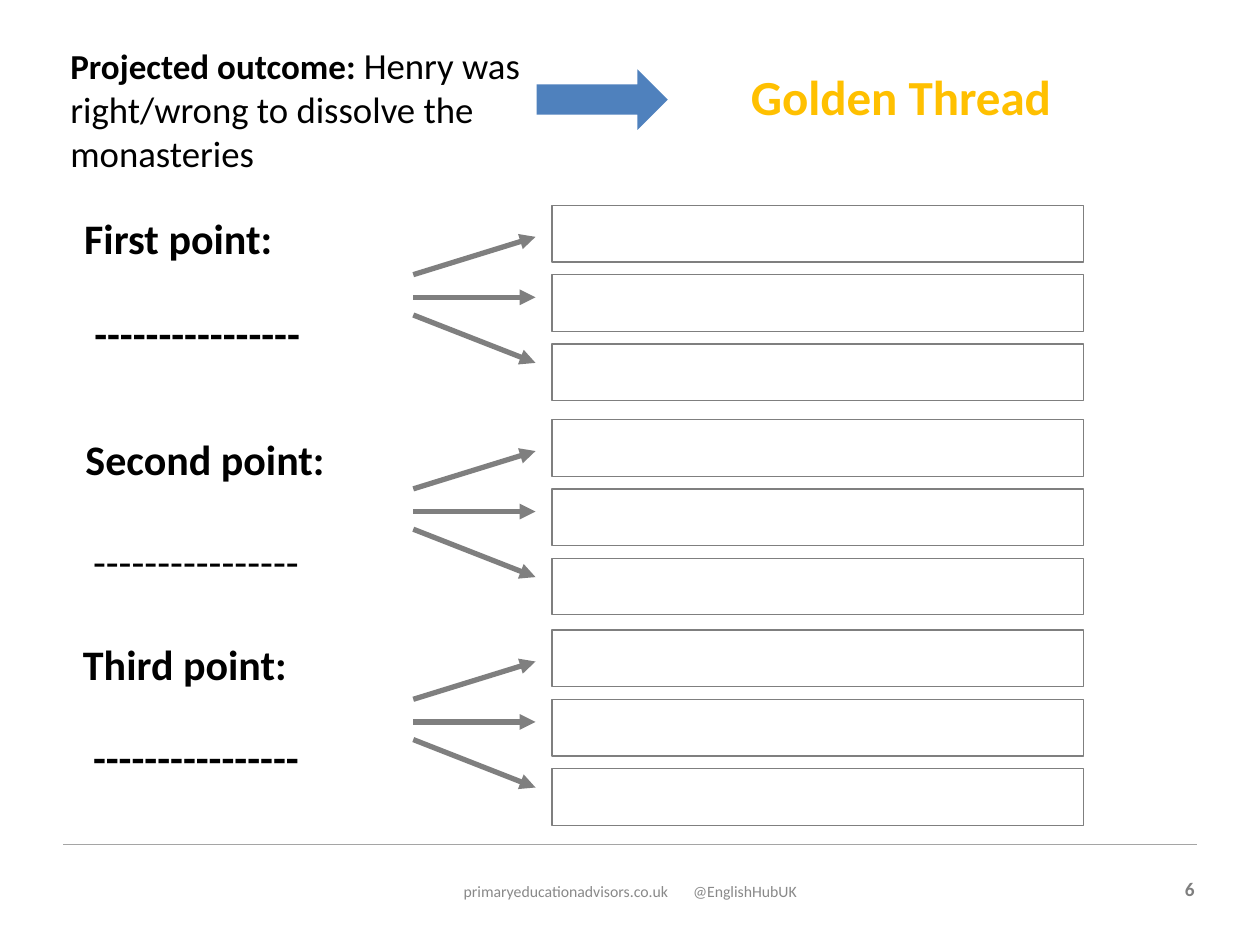
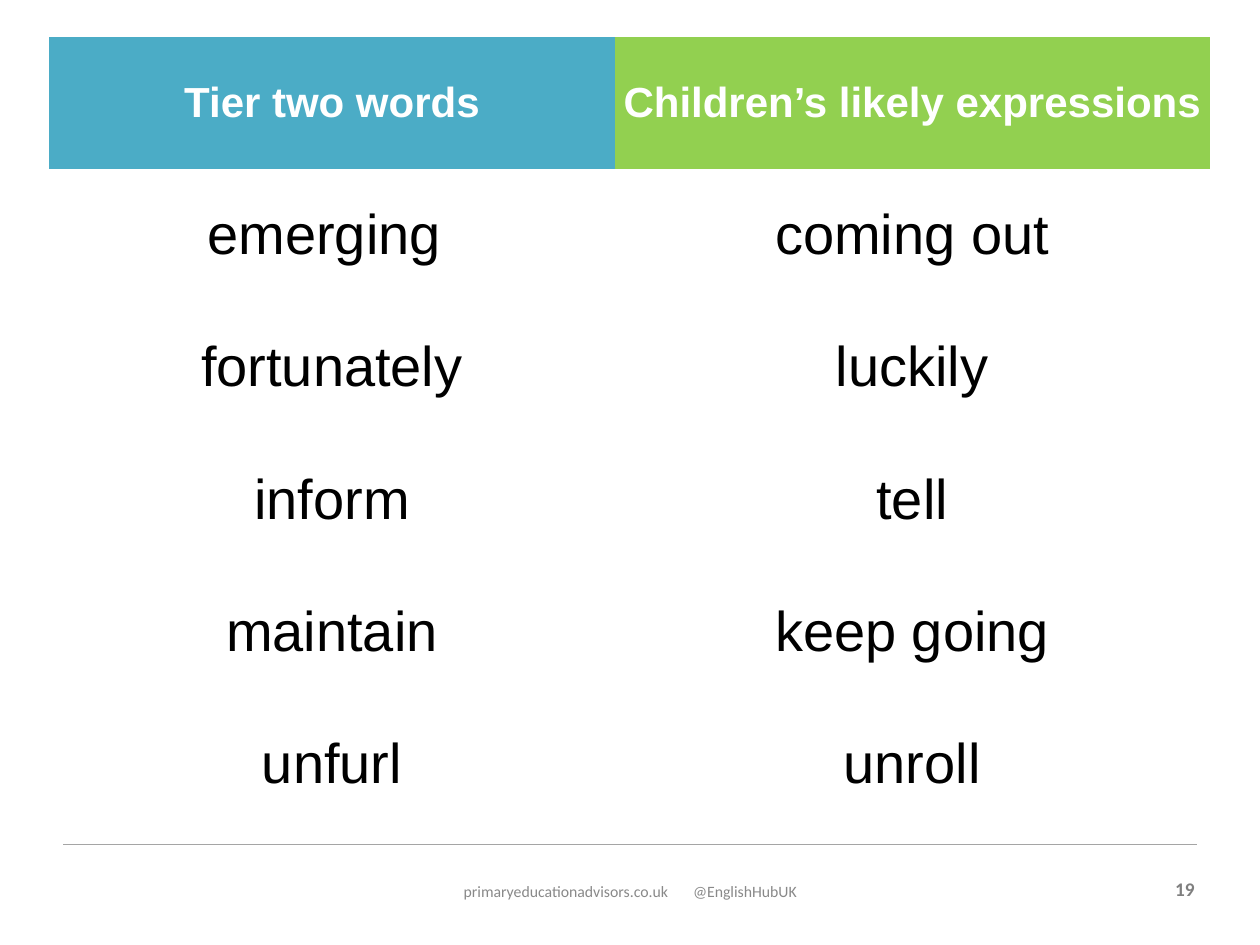
from lxml import etree
from pptx import Presentation
from pptx.dml.color import RGBColor
from pptx.enum import shapes, text
from pptx.oxml.ns import qn
from pptx.util import Inches, Pt

# Content
OUTCOME = [("Projected outcome: ", 20, True),
           ("Henry was right/wrong to dissolve the monasteries", 21, False)]
BLANK_LINE = "-" * 16
# label, label (left, top), blank line (left, top), blank line bold, boxes' top
POINTS = [
    ("First point:", (0.57, 1.64), (0.65, 2.39), True, 1.63),
    ("Second point:", (0.58, 3.39), (0.64, 4.20), False, 3.33),
    ("Third point:", (0.56, 5.02), (0.64, 5.76), True, 5.00),
]
WORDS = [
    ("Tier two words", "Children’s likely expressions"),
    ("emerging ", "coming out"),
    ("fortunately", "luckily"),
    ("inform", "tell"),
    ("maintain", "keep going"),
    ("unfurl", "unroll"),
]
FOOTER = "primaryeducationadvisors.co.uk\t@EnglishHubUK"

# Shared look
COLORS = {"ink": "000000", "white": "FFFFFF", "gold": "FFC000", "grey": "7F7F7F",
          "rule": "A5A5A5", "footer": "898989", "blue": "4F81BD",
          "teal": "4BACC6", "green": "92D050"}
BOX_LEFT, BOX_WIDTH, BOX_HEIGHT, BOX_STEP = 4.38, 4.22, 0.45, 0.55
ARROW_LEFT, ARROW_RIGHT = 3.28, 4.25
ARROW_OFFSETS = [(0.55, 0.25), (0.73, 0.73), (0.87, 1.25)]
COLUMN_WIDTHS = (4.49, 4.72)
ROW_HEIGHT = 1.05
PLAIN_TABLE_STYLE = "{2D5ABB26-0587-4C30-8999-92F81FD0307C}"


def color(name):
    return RGBColor.from_string(COLORS[name])


def set_font(font, size, ink="ink", bold=False, name="Calibri"):
    font.name, font.size, font.bold = name, Pt(size), bold
    font.color.rgb = color(ink)


def add_text(slide, left, top, width, height, content, size, ink="ink",
             bold=False, align=text.PP_ALIGN.LEFT):
    box = slide.shapes.add_textbox(*map(Inches, (left, top, width, height)))
    box.text_frame.word_wrap = True
    para = box.text_frame.paragraphs[0]
    para.text, para.alignment = content, align
    set_font(para.font, size, ink, bold)
    return box


def add_line(slide, start, end, ink, width, arrow=False):
    line = slide.shapes.add_connector(shapes.MSO_CONNECTOR.STRAIGHT,
                                      *map(Inches, (*start, *end)))
    line.line.color.rgb = color(ink)
    line.line.width = Pt(width)
    if arrow:
        etree.SubElement(line.line._get_or_add_ln(), qn("a:tailEnd"), type="triangle")
    etree.SubElement(line._element.spPr, qn("a:effectLst"))


def add_shape(slide, kind, left, top, width, height):
    shape = slide.shapes.add_shape(kind, *map(Inches, (left, top, width, height)))
    shape.shadow.inherit = False
    return shape


def add_footer(slide, number):
    add_line(slide, (0.5, 6.7), (9.5, 6.7), "rule", 0.75)
    add_text(slide, 9.2, 6.91, 0.38, 0.29, number, 11, "grey", True, text.PP_ALIGN.RIGHT)
    box = slide.shapes.add_textbox(*map(Inches, (3.31, 6.95, 3.38, 0.4)))
    box.text_frame.margin_left = Inches(0.37)
    para = box.text_frame.paragraphs[0]
    para.text = FOOTER
    tabs = etree.SubElement(para._p.get_or_add_pPr(), qn("a:tabLst"))
    etree.SubElement(tabs, qn("a:tab"), pos=str(Inches(1.82)), algn="l")
    set_font(para.font, 9, "footer")


def build_thread_slide(deck):
    slide = deck.slides.add_slide(deck.slide_layouts[5])
    add_footer(slide, "6")

    # Title and projected outcome
    title = slide.shapes.title
    title.left, title.top, title.width, title.height = map(Inches, (5.55, 0.48, 3.2, 0.57))
    title.text_frame.vertical_anchor = text.MSO_ANCHOR.TOP
    title.text_frame.auto_size = text.MSO_AUTO_SIZE.NONE
    title.text = "Golden Thread"
    para = title.text_frame.paragraphs[0]
    para.alignment = text.PP_ALIGN.CENTER
    set_font(para.font, 28, "gold", True)

    outcome = add_text(slide, 0.46, 0.29, 3.78, 1.21, "", 21)
    for words, size, bold in OUTCOME:
        span = outcome.text_frame.paragraphs[0].add_run()
        span.text = words
        set_font(span.font, size, bold=bold)
    block_arrow = add_shape(slide, shapes.MSO_SHAPE.RIGHT_ARROW, 4.26, 0.55, 1.04, 0.48)
    block_arrow.fill.solid()
    block_arrow.fill.fore_color.rgb = color("blue")
    block_arrow.line.fill.background()

    # Each point: label, blank line, three arrows and three boxes
    for label, label_at, blank_at, blank_bold, top in POINTS:
        add_text(slide, *label_at, 2.92, 0.5, label, 24, bold=True)
        add_text(slide, *blank_at, 2.44, 0.5, BLANK_LINE, 24, bold=blank_bold)
        for row, (start, end) in enumerate(ARROW_OFFSETS):
            add_line(slide, (ARROW_LEFT, top + start), (ARROW_RIGHT, top + end),
                     "grey", 3, arrow=True)
            box = add_shape(slide, shapes.MSO_SHAPE.RECTANGLE, BOX_LEFT,
                            top + row * BOX_STEP, BOX_WIDTH, BOX_HEIGHT)
            box.fill.background()
            box.line.color.rgb = color("grey")
            box.line.width = Pt(0.75)


def build_words_slide(deck):
    slide = deck.slides.add_slide(deck.slide_layouts[6])
    add_footer(slide, "19")

    # Word table
    frame = slide.shapes.add_table(len(WORDS), 2, *map(Inches, (
        0.39, 0.29, sum(COLUMN_WIDTHS), ROW_HEIGHT * len(WORDS))))
    table = frame.table
    table.horz_banding = False
    table._tbl.tblPr.find(qn("a:tableStyleId")).text = PLAIN_TABLE_STYLE
    for column, width in zip(table.columns, COLUMN_WIDTHS):
        column.width = Inches(width)
    for row, pair in enumerate(WORDS):
        table.rows[row].height = Inches(ROW_HEIGHT)
        for col, word in enumerate(pair):
            cell = table.cell(row, col)
            cell.margin_left = cell.margin_right = Inches(0.04)
            cell.margin_top = cell.margin_bottom = Inches(0.04)
            cell.vertical_anchor = text.MSO_ANCHOR.MIDDLE
            para = cell.text_frame.paragraphs[0]
            para.text, para.alignment = word, text.PP_ALIGN.CENTER
            if row == 0:
                cell.fill.solid()
                cell.fill.fore_color.rgb = color(("teal", "green")[col])
                set_font(para.font, 24, "white", True, "Arial")
            else:
                cell.fill.background()
                set_font(para.font, 32, name="Arial")


def main():
    deck = Presentation()
    deck.slide_width, deck.slide_height = Inches(10), Inches(7.5)
    build_thread_slide(deck)
    build_words_slide(deck)
    deck.save("out.pptx")


if __name__ == "__main__":
    main()
